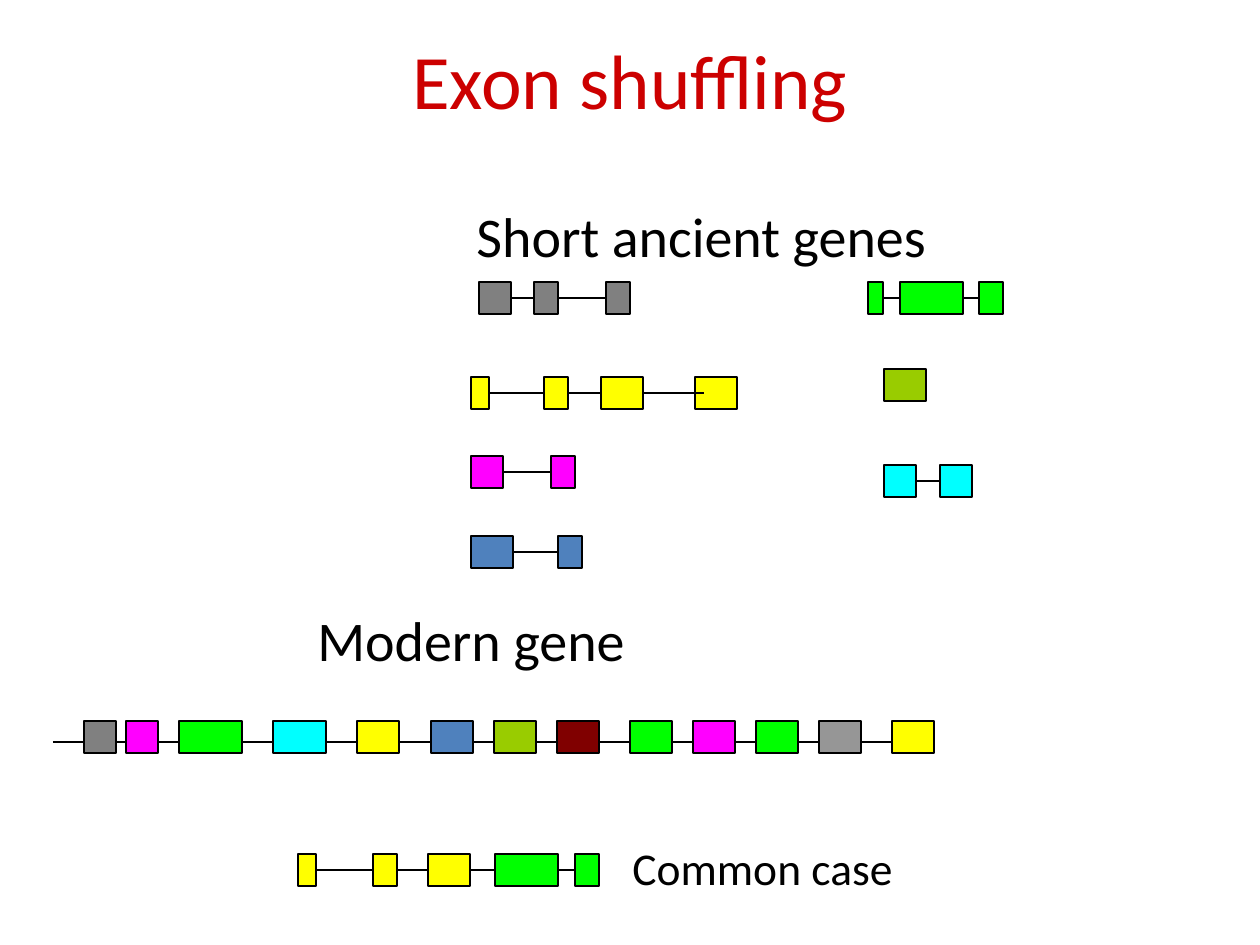
from dataclasses import dataclass
from itertools import pairwise

from pptx import Presentation
from pptx.dml.color import RGBColor
from pptx.enum.shapes import MSO_CONNECTOR, MSO_SHAPE
from pptx.enum.text import MSO_ANCHOR, PP_ALIGN
from pptx.oxml.ns import qn
from pptx.shapes.autoshape import Shape
from pptx.shapes.connector import Connector
from pptx.shapes.shapetree import GroupShapes
from pptx.slide import Slide
from pptx.util import Emu, Pt
from lxml import etree

RECTANGLE = MSO_SHAPE.RECTANGLE
STRAIGHT = MSO_CONNECTOR.STRAIGHT
MIDDLE = MSO_ANCHOR.MIDDLE
CENTER = PP_ALIGN.CENTER
LEFT_SIDE, RIGHT_SIDE = 1, 3
TITLE_ONLY = 5

BLACK = RGBColor(0x00, 0x00, 0x00)
RED = RGBColor(0xCC, 0x00, 0x00)
GRAY = RGBColor(0x80, 0x80, 0x80)
LIGHT_GRAY = RGBColor(0x96, 0x96, 0x96)
GREEN = RGBColor(0x00, 0xFF, 0x00)
OLIVE = RGBColor(0x99, 0xCC, 0x00)
YELLOW = RGBColor(0xFF, 0xFF, 0x00)
MAGENTA = RGBColor(0xFF, 0x00, 0xFF)
CYAN = RGBColor(0x00, 0xFF, 0xFF)
BLUE = RGBColor(0x4F, 0x81, 0xBD)
MAROON = RGBColor(0x80, 0x00, 0x00)

PX_PER_INCH = 126
EXON_HEIGHT = 32
LINE_WIDTH = Pt(0.75)
FONT = "Calibri"


@dataclass(frozen=True)
class Exon:
    left: int
    width: int
    color: RGBColor


@dataclass(frozen=True)
class Gene:
    top: int
    exons: tuple[Exon, ...]
    overhang: int = 0


@dataclass(frozen=True)
class Label:
    text: str
    left: int
    top: int
    width: int
    height: int
    size: int


ANCIENT_GENES = (
    Gene(282, (Exon(479, 32, GRAY), Exon(534, 24, GRAY), Exon(606, 24, GRAY))),
    Gene(282, (Exon(868, 15, GREEN), Exon(900, 63, GREEN), Exon(979, 24, GREEN))),
    Gene(377, (Exon(471, 18, YELLOW), Exon(544, 24, YELLOW),
               Exon(601, 42, YELLOW), Exon(695, 42, YELLOW)), overhang=9),
    Gene(369, (Exon(884, 42, OLIVE),)),
    Gene(456, (Exon(471, 32, MAGENTA), Exon(551, 24, MAGENTA))),
    Gene(465, (Exon(884, 32, CYAN), Exon(940, 32, CYAN))),
    Gene(536, (Exon(471, 42, BLUE), Exon(558, 24, BLUE))),
)
COMMON_GENE = Gene(854, (
    Exon(298, 18, YELLOW), Exon(373, 24, YELLOW), Exon(428, 42, YELLOW),
    Exon(495, 63, GREEN), Exon(575, 24, GREEN),
))
MODERN_GENE = Gene(721, (
    Exon(84, 32, GRAY), Exon(126, 32, MAGENTA), Exon(179, 63, GREEN),
    Exon(273, 53, CYAN), Exon(357, 42, YELLOW), Exon(431, 42, BLUE),
    Exon(494, 42, OLIVE), Exon(557, 42, MAROON), Exon(630, 42, GREEN),
    Exon(693, 42, MAGENTA), Exon(756, 42, GREEN), Exon(819, 42, LIGHT_GRAY),
    Exon(892, 42, YELLOW),
))
MODERN_AXIS = 742
MODERN_START = 53

LABELS = (
    Label("Short ancient genes", 464, 195, 523, 79, 32),
    Label("Modern gene", 305, 599, 354, 79, 32),
    Label("Common case", 620, 834, 289, 68, 26),
)


def px(value: int) -> Emu:
    return Emu(round(value * 914400 / PX_PER_INCH))


def add_line(shapes: GroupShapes, start: int, end: int, y: int) -> Connector:
    line = shapes.add_connector(STRAIGHT, px(start), px(y), px(end), px(y))
    line.line.color.rgb = BLACK
    line.line.width = LINE_WIDTH
    etree.SubElement(line._element.spPr, qn("a:effectLst"))
    return line


def add_exon(shapes: GroupShapes, exon: Exon, top: int) -> Shape:
    shape = shapes.add_shape(
        RECTANGLE, px(exon.left), px(top), px(exon.width), px(EXON_HEIGHT))
    shape.shadow.inherit = False
    shape.fill.solid()
    shape.fill.fore_color.rgb = exon.color
    shape.line.color.rgb = BLACK
    shape.line.width = LINE_WIDTH
    return shape


def add_joined_gene(slide: Slide, gene: Gene) -> None:
    shapes = slide.shapes.add_group_shape().shapes
    boxes = [add_exon(shapes, exon, gene.top) for exon in gene.exons]
    axis = gene.top + EXON_HEIGHT // 2
    last = len(boxes) - 1
    for index, (before, after) in enumerate(pairwise(gene.exons), start=1):
        overhang = gene.overhang if index == last else 0
        line = add_line(
            shapes, before.left + before.width, after.left + overhang, axis)
        line.begin_connect(boxes[index - 1], RIGHT_SIDE)
        if not overhang:
            line.end_connect(boxes[index], LEFT_SIDE)


def add_modern_gene(slide: Slide) -> None:
    shapes = slide.shapes.add_group_shape().shapes
    start = MODERN_START
    for exon in MODERN_GENE.exons:
        add_line(shapes, start, exon.left, MODERN_AXIS)
        add_exon(shapes, exon, MODERN_GENE.top)
        start = exon.left + exon.width


def add_label(slide: Slide, label: Label) -> None:
    box = slide.shapes.add_textbox(
        px(label.left), px(label.top), px(label.width), px(label.height))
    box.text_frame.word_wrap = False
    run = box.text_frame.paragraphs[0].add_run()
    run.text = label.text
    run.font.name = FONT
    run.font.size = Pt(label.size)
    run.font.color.rgb = BLACK


def add_title(slide: Slide, text: str) -> None:
    title = slide.shapes.title
    title.left, title.top = px(63), px(0)
    title.width, title.height = px(1134), px(158)
    title.text_frame.vertical_anchor = MIDDLE
    paragraph = title.text_frame.paragraphs[0]
    paragraph.alignment = CENTER
    run = paragraph.add_run()
    run.text = text
    run.font.name = FONT
    run.font.size = Pt(44)
    run.font.color.rgb = RED


def main() -> None:
    presentation = Presentation()
    presentation.slide_width = px(1260)
    presentation.slide_height = px(945)
    slide = presentation.slides.add_slide(presentation.slide_layouts[TITLE_ONLY])
    add_title(slide, "Exon shuffling")
    for gene in (*ANCIENT_GENES, COMMON_GENE):
        add_joined_gene(slide, gene)
    add_modern_gene(slide)
    for label in LABELS:
        add_label(slide, label)
    presentation.save("out.pptx")


if __name__ == "__main__":
    main()
